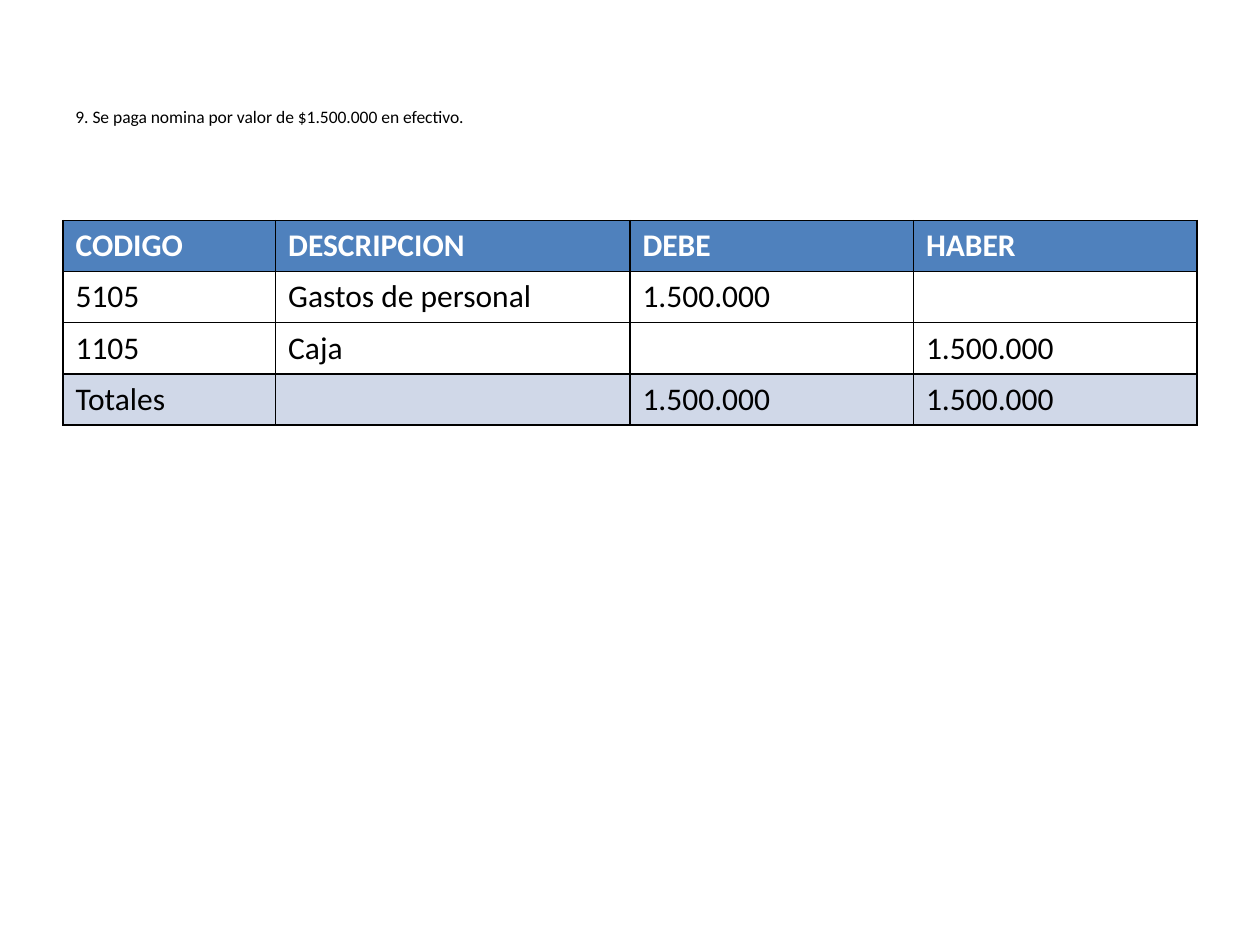
import pptx
import pptx.util
import pptx.dml.color
import pptx.enum.text
import pptx.oxml
import pptx.oxml.ns

Pt = pptx.util.Pt
RGB = pptx.dml.color.RGBColor
BLACK = RGB(0x00, 0x00, 0x00)
WHITE = RGB(0xFF, 0xFF, 0xFF)
BLUE = RGB(0x4F, 0x81, 0xBD)
PALE = RGB(0xD0, 0xD8, 0xE8)

WIDTHS = (121.5, 202.5, 162, 162)
HEIGHT = 29.2
ROWS = (
    ("CODIGO", "DESCRIPCION", "DEBE", "HABER"),
    ("5105", "Gastos de personal", "1.500.000", ""),
    ("1105", "Caja", "", "1.500.000"),
    ("Totales", "", "1.500.000", "1.500.000"),
)
FILLS = (BLUE, None, None, PALE)


class Deck:
    font = "Calibri"
    border = 1

    def __init__(self, wide, high):
        self.file = pptx.Presentation()
        self.file.slide_width, self.file.slide_height = Pt(wide), Pt(high)
        self.slide = self.file.slides.add_slide(self.file.slide_layouts[6])

    def run(self, para, text, size, color, bold=False):
        run = para.add_run()
        run.text = text
        run.font.name = self.font
        run.font.size = Pt(size)
        run.font.bold = bold
        run.font.color.rgb = color

    def title(self, text, left, top, wide, high):
        box = self.slide.shapes.add_textbox(Pt(left), Pt(top), Pt(wide), Pt(high))
        frame = box.text_frame
        frame.word_wrap = True
        frame.vertical_anchor = pptx.enum.text.MSO_ANCHOR.MIDDLE
        para = frame.paragraphs[0]
        para.alignment = pptx.enum.text.PP_ALIGN.JUSTIFY
        self.run(para, text, 10, BLACK)

    def frame(self, cell):
        """Draw a black line on all four sides of a cell."""
        props = cell._tc.get_or_add_tcPr()
        for side in "LRTB":
            props.append(pptx.oxml.parse_xml(
                f'<a:ln{side} {pptx.oxml.ns.nsdecls("a")} w="{Pt(self.border)}">'
                f'<a:solidFill><a:srgbClr val="{BLACK}"/></a:solidFill></a:ln{side}>'))

    def cell(self, cell, text, fill, head):
        self.frame(cell)
        if fill is None:
            cell.fill.background()
        else:
            cell.fill.solid()
            cell.fill.fore_color.rgb = fill
        if text:
            color = WHITE if head else BLACK
            self.run(cell.text_frame.paragraphs[0], text, 18, color, head)

    def table(self, rows, fills, left, top, widths, high):
        grid = self.slide.shapes.add_table(
            len(rows), len(widths), Pt(left), Pt(top),
            Pt(sum(widths)), Pt(high * len(rows))).table
        for col, wide in zip(grid.columns, widths):
            col.width = Pt(wide)
        for i, (texts, fill) in enumerate(zip(rows, fills)):
            grid.rows[i].height = Pt(high)
            for j, text in enumerate(texts):
                self.cell(grid.cell(i, j), text, fill, i == 0)


def main():
    deck = Deck(720, 540)
    deck.title("9. Se paga nomina por valor de $1.500.000 en efectivo.",
               36, 21.6, 648, 90)
    deck.table(ROWS, FILLS, 36, 126, WIDTHS, HEIGHT)
    deck.file.save("out.pptx")


if __name__ == "__main__":
    main()
